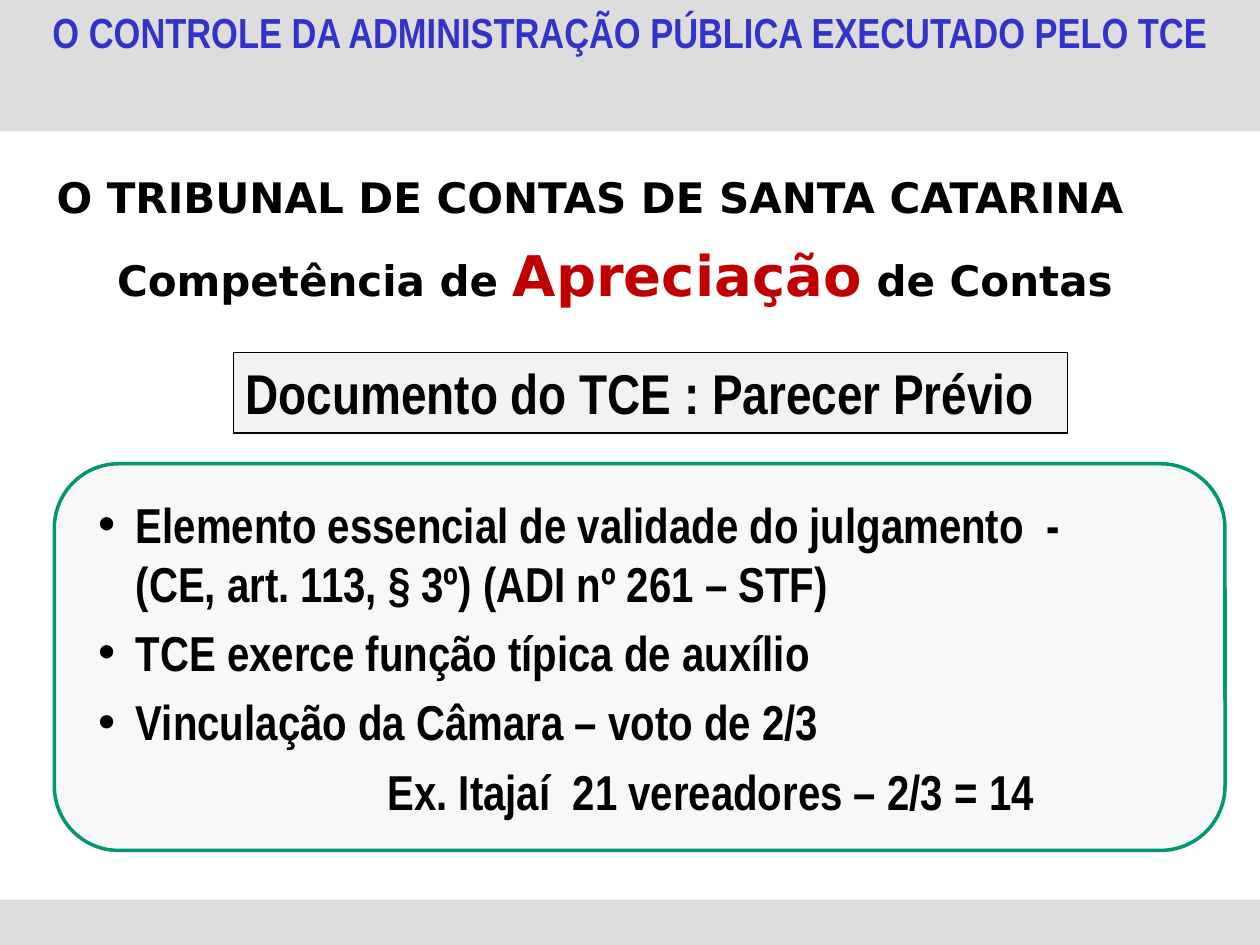
from dataclasses import dataclass

from lxml import etree
from pptx import Presentation
from pptx import util as u
from pptx.dml.color import RGBColor
from pptx.enum import shapes, text
from pptx.oxml import ns


@dataclass(frozen=True)
class Theme:
    narrow: str = "Arial Narrow"
    wide: str = "DejaVu Sans"
    black: str = "000000"
    blue: str = "3333CC"
    red: str = "C00000"
    green: str = "009771"
    band: str = "DDDDDD"
    panel: str = "F2F2F2"
    grey: str = "808080"
    small: int = 24
    medium: int = 28
    large: int = 32


def apply(target, values):
    for name, value in values.items():
        setattr(target, name, value)


def child(parent, tag, **attributes):
    return etree.SubElement(parent, ns.qn(tag), attributes)


class SlideBuilder:
    def __init__(self, slide, theme):
        self.slide = slide
        self.theme = theme

    def place(self, shape, box):
        apply(shape, dict(zip(("left", "top", "width", "height"), map(u.Pt, box))))

    def run(self, paragraph, words, font, size, color=None):
        run = paragraph.add_run()
        run.text = words
        apply(run.font, {"name": font, "size": u.Pt(size), "bold": True})
        run.font.color.rgb = RGBColor.from_string(color or self.theme.black)
        return run

    def block(self, box, fill, line=None, width=0, kind=shapes.MSO_SHAPE.RECTANGLE):
        block = self.slide.shapes.add_shape(kind, *map(u.Pt, box))
        block.shadow.inherit = False
        block.fill.solid()
        block.fill.fore_color.rgb = RGBColor.from_string(fill)
        if line:
            block.line.color.rgb = RGBColor.from_string(line)
            block.line.width = u.Pt(width)
        else:
            block.line.fill.background()
        return block

    def title(self, words, box):
        title = self.slide.shapes.title
        self.place(title, box)
        self.slide.shapes._spTree.append(title._element)
        apply(title.text_frame, {
            "word_wrap": True,
            "auto_size": text.MSO_AUTO_SIZE.NONE,
            "vertical_anchor": text.MSO_ANCHOR.TOP,
        })
        paragraph = title.text_frame.paragraphs[0]
        paragraph.alignment = text.PP_ALIGN.CENTER
        run = self.run(paragraph, words, self.theme.narrow, self.theme.small, self.theme.blue)
        effects = etree.Element(ns.qn("a:effectLst"))
        shadow = child(effects, "a:outerShdw", blurRad="0", dist="25400", dir="2700000")
        child(shadow, "a:srgbClr", val=self.theme.grey)
        run._r.rPr.find(ns.qn("a:solidFill")).addnext(effects)

    def heading(self, box, parts):
        heading = self.slide.shapes.add_textbox(*map(u.Pt, box))
        heading.text_frame.word_wrap = True
        for words, size, color in parts:
            self.run(heading.text_frame.paragraphs[0], words, self.theme.wide, size, color)

    def label(self, words, box):
        label = self.block(box, self.theme.panel, self.theme.black, 0.75)
        apply(label.text_frame, {"word_wrap": False, "vertical_anchor": text.MSO_ANCHOR.TOP})
        paragraph = label.text_frame.paragraphs[0]
        paragraph.alignment = text.PP_ALIGN.LEFT
        self.run(paragraph, words, self.theme.narrow, self.theme.large)

    def card(self, box, items):
        card = self.block(box, self.theme.grey, self.theme.green, 2,
                          shapes.MSO_SHAPE.ROUNDED_RECTANGLE)
        fill = card._element.spPr.find(ns.qn("a:solidFill"))
        child(fill[0], "a:alpha", val="5000")
        frame = card.text_frame
        apply(frame, {"word_wrap": True, "vertical_anchor": text.MSO_ANCHOR.MIDDLE})
        for index, (lines, margin, bullet) in enumerate(items):
            paragraph = frame.add_paragraph() if index else frame.paragraphs[0]
            apply(paragraph, {"alignment": text.PP_ALIGN.LEFT, "space_after": u.Pt(6)})
            properties = paragraph._p.get_or_add_pPr()
            properties.set("marL", str(u.Pt(margin)))
            if bullet:
                properties.set("indent", str(u.Pt(-21.6)))
                child(properties, "a:buFont", typeface="Arial")
                child(properties, "a:buChar", char="•")
            for number, words in enumerate(lines):
                if number:
                    paragraph.add_line_break()
                self.run(paragraph, words, self.theme.narrow, self.theme.medium)


def main():
    presentation = Presentation()
    apply(presentation, {"slide_width": u.Pt(720), "slide_height": u.Pt(540)})
    theme = Theme()
    builder = SlideBuilder(presentation.slides.add_slide(presentation.slide_layouts[5]), theme)

    for band in ((0, 514, 720, 26), (0, 0, 720, 75)):
        builder.block(band, theme.band)
    builder.title("O CONTROLE DA ADMINISTRAÇÃO PÚBLICA EXECUTADO PELO TCE", (0, 0, 720, 65.5))
    builder.heading((25.2, 94.3, 663, 36.7), [
        ("O TRIBUNAL DE CONTAS DE SANTA CATARINA", theme.small, theme.black),
    ])
    builder.heading((59.8, 134, 595.5, 46), [
        ("Competência de ", theme.small, theme.black),
        ("Apreciação", theme.large, theme.red),
        (" de Contas", theme.small, theme.black),
    ])
    builder.label("Documento do TCE : Parecer Prévio", (133.3, 201.5, 476.6, 46))
    builder.card((31, 265, 669, 221), [
        (["Elemento essencial de validade do julgamento  -",
          "(CE, art. 113, § 3º) (ADI nº 261 – STF)"], 28.8, True),
        (["TCE exerce função típica de auxílio"], 28.8, True),
        (["Vinculação da Câmara – voto de 2/3"], 28.8, True),
        (["Ex. Itajaí  21 vereadores – 2/3 = 14"], 172.5, False),
    ])
    presentation.save("out.pptx")


if __name__ == "__main__":
    main()
